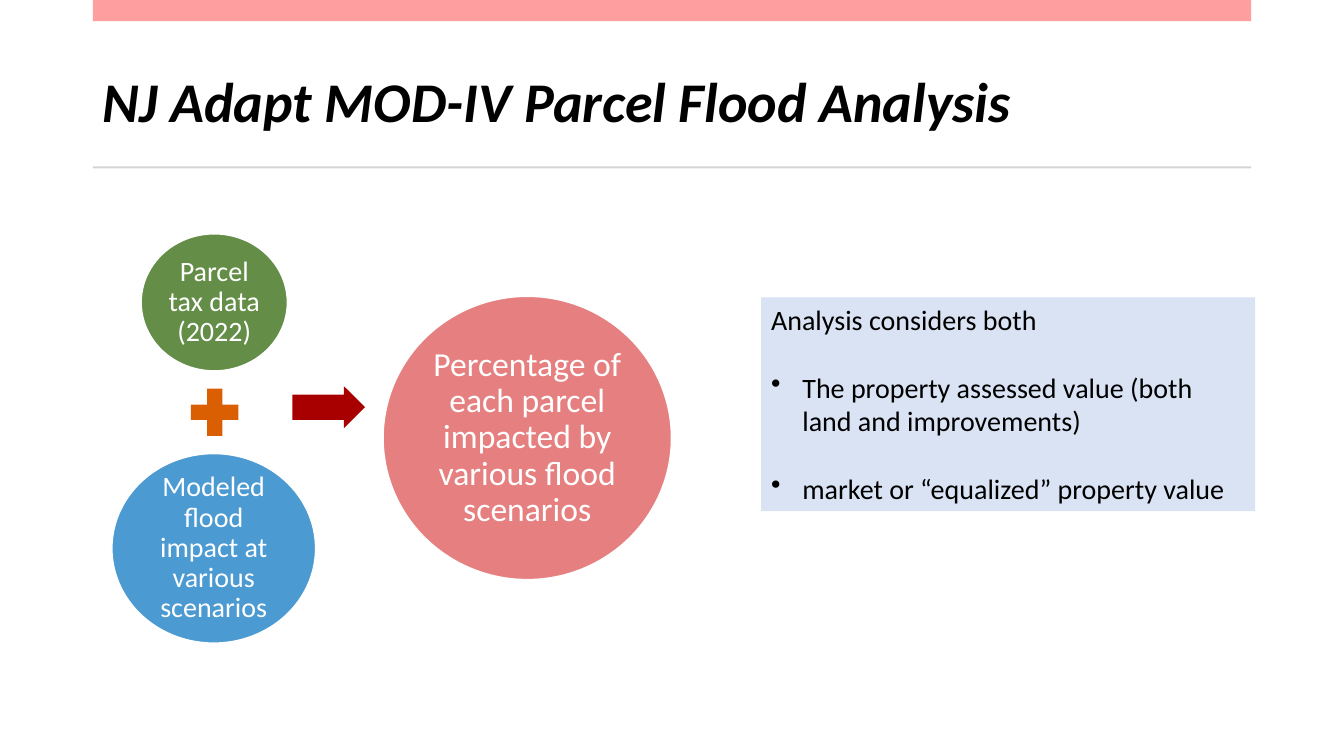
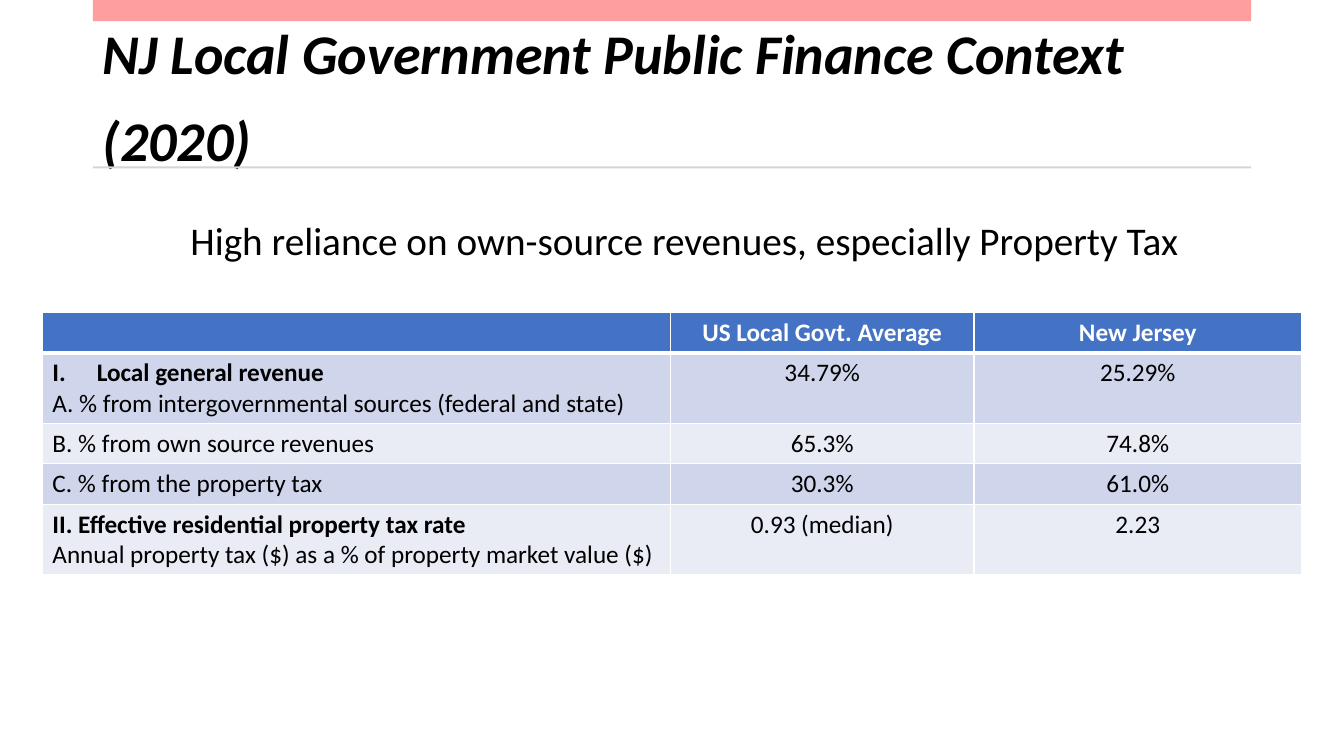
import pptx
import pptx.dml.color
import pptx.enum.shapes
import pptx.enum.text
import pptx.oxml.ns
import pptx.util
from lxml import etree

Inches = pptx.util.Inches
Pt = pptx.util.Pt
Shape = pptx.enum.shapes.MSO_SHAPE
Align = pptx.enum.text.PP_ALIGN
Anchor = pptx.enum.text.MSO_ANCHOR
qn = pptx.oxml.ns.qn


class Theme:
    FONT = "Calibri"
    BLACK, WHITE = "000000", "FFFFFF"
    BAND, RULE = "FF9E9E", "D5D5D5"
    GREEN, BLUE, RED = "548235", "0070C0", "CE0000"
    PLUS, ARROW, PANEL = "D95F02", "A80000", "DAE3F3"
    HEADER, ROWS = "4472C4", ("CFD5EA", "E9EBF5")
    TITLE, LEAD, LARGE, BODY, TABLE = 40, 28, 24, 20, 18


def rgb(code):
    return pptx.dml.color.RGBColor.from_string(code)


def add_child(parent, tag, **attributes):
    return etree.SubElement(parent, qn(tag), attributes)


def set_marker(para, indent, tag, **attributes):
    """Give a paragraph a hanging indent with a bullet or number."""
    properties = para._p.get_or_add_pPr()
    properties.set("marL", str(Inches(indent)))
    properties.set("indent", str(-Inches(indent)))
    add_child(properties, tag, **attributes)


def set_borders(cell, top, bottom):
    """Draw white cell borders, with top and bottom widths in points."""
    properties = cell._tc.get_or_add_tcPr()
    sides = {"a:lnL": 1, "a:lnR": 1, "a:lnT": top, "a:lnB": bottom}
    for position, (tag, width) in enumerate(sides.items()):
        line = etree.Element(qn(tag), {"w": str(Pt(width))})
        add_child(add_child(line, "a:solidFill"), "a:srgbClr", val=Theme.WHITE)
        properties.insert(position, line)


class Deck:
    def __init__(self):
        self.deck = pptx.Presentation()
        self.deck.slide_width = Inches(13.33)
        self.deck.slide_height = Inches(7.5)
        self.page = None

    def style(self, para, size, color=Theme.BLACK, bold=False, italic=False):
        font = para.font
        font.name, font.size = Theme.FONT, Pt(size)
        font.bold, font.italic = bold, italic
        font.color.rgb = rgb(color)

    def add_page(self, title, title_top, spacing):
        self.page = self.deck.slides.add_slide(self.deck.slide_layouts[6])
        box = self.text(title, 0.92, title_top, 11.49, 1.18, Theme.TITLE, bold=True, italic=True)
        box.text_frame.vertical_anchor = Anchor.MIDDLE
        box.text_frame.paragraphs[0].line_spacing = spacing
        self.shape(Shape.RECTANGLE, 0.92, 0, 11.49, 0.21, Theme.BAND)
        self.shape(Shape.RECTANGLE, 0.92, 1.65, 11.49, 0.02, Theme.RULE)

    def text(self, words, left, top, width, height, size, **look):
        box = self.page.shapes.add_textbox(Inches(left), Inches(top), Inches(width), Inches(height))
        box.text_frame.word_wrap = True
        para = box.text_frame.paragraphs[0]
        para.text = words
        self.style(para, size, **look)
        return box

    def shape(self, kind, left, top, width, height, fill):
        shape = self.page.shapes.add_shape(kind, Inches(left), Inches(top), Inches(width), Inches(height))
        shape.shadow.inherit = False
        shape.fill.solid()
        shape.fill.fore_color.rgb = rgb(fill)
        shape.line.fill.background()
        return shape

    def circle(self, words, left, top, width, height, fill, opacity, size):
        circle = self.shape(Shape.OVAL, left, top, width, height, fill)
        color = circle._element.spPr.find(qn("a:solidFill")).find(qn("a:srgbClr"))
        add_child(color, "a:alpha", val=str(opacity * 1000))
        circle.line.color.rgb = rgb(Theme.WHITE)
        circle.line.width = Pt(1)
        frame = circle.text_frame
        frame.word_wrap = True
        frame.vertical_anchor = Anchor.MIDDLE
        frame.margin_left = frame.margin_right = Inches(0.03)
        frame.margin_top = frame.margin_bottom = Inches(0.03)
        para = frame.paragraphs[0]
        para.text = words
        para.alignment = Align.CENTER
        para.line_spacing = 0.9
        self.style(para, size, Theme.WHITE)

    def panel(self, heading, bullets, left, top, width, height):
        box = self.text(heading, left, top, width, height, Theme.BODY)
        box.fill.solid()
        box.fill.fore_color.rgb = rgb(Theme.PANEL)
        for bullet in bullets:
            para = box.text_frame.add_paragraph()
            para.text = bullet
            para.space_before = Pt(24.4)
            set_marker(para, 0.31, "a:buChar", char="•")
            self.style(para, Theme.BODY)

    def table(self, rows, left, top, widths, heights):
        """Each cell is a list of (words, bold, numbered) lines."""
        table = self.page.shapes.add_table(
            len(rows), len(widths), Inches(left), Inches(top),
            Inches(sum(widths)), Inches(sum(heights))).table
        for column, width in zip(table.columns, widths):
            column.width = Inches(width)
        for row, height in zip(table.rows, heights):
            row.height = Inches(height)
        for r, row in enumerate(rows):
            for c, lines in enumerate(row):
                cell = table.cell(r, c)
                cell.fill.solid()
                cell.fill.fore_color.rgb = rgb(Theme.ROWS[(r - 1) % 2] if r else Theme.HEADER)
                set_borders(cell, 3 if r == 1 else 1, 1 if r else 3)
                for n, (words, bold, numbered) in enumerate(lines):
                    frame = cell.text_frame
                    para = frame.add_paragraph() if n else frame.paragraphs[0]
                    para.text = words
                    para.alignment = Align.CENTER if c else Align.LEFT
                    if numbered:
                        set_marker(para, 0.44, "a:buAutoNum", type="romanUcPeriod")
                    self.style(para, Theme.TABLE, Theme.BLACK if r else Theme.WHITE, bold)


def plain(words):
    return [(words, False, False)]


def strong(words):
    return [(words, True, False)]


def build_flood_page(deck):
    deck.add_page("NJ Adapt MOD-IV Parcel Flood Analysis", 0.37, 1.1)
    deck.circle("Parcel tax data (2022)", 1.4, 2.32, 1.45, 1.36, Theme.GREEN, 90, Theme.BODY)
    deck.shape(Shape.MATH_PLUS, 1.81, 3.77, 0.64, 0.64, Theme.PLUS)
    deck.circle("Modeled flood impact at various scenarios", 1.11, 4.5, 2.02, 1.88,
                Theme.BLUE, 70, Theme.BODY)
    arrow = deck.shape(Shape.RIGHT_ARROW, 2.9, 3.83, 0.72, 0.42, Theme.ARROW)
    arrow.adjustments[0] = 0.6
    deck.circle("Percentage of each parcel impacted by various flood scenarios",
                3.8, 2.94, 2.86, 2.81, Theme.RED, 50, Theme.LARGE)
    deck.panel("Analysis considers both",
               ["The property assessed value (both land and improvements)",
                "market or “equalized” property value"],
               7.55, 2.95, 4.9, 2.12)


def build_finance_page(deck):
    deck.add_page("NJ Local Government Public Finance Context (2020)", 0.26, 1.3)
    deck.text("High reliance on own-source revenues, especially Property Tax",
              1.79, 2.1, 10.42, 0.57, Theme.LEAD)
    revenue = [("Local general revenue", True, True)]
    revenue += plain("A. % from intergovernmental sources (federal and state)")
    tax_rate = strong("II. Effective residential property tax rate")
    tax_rate += plain("Annual property tax ($) as a % of property market value ($)")
    rows = [
        [[], strong("US Local Govt. Average"), strong("New Jersey")],
        [revenue, plain("34.79%"), plain("25.29%")],
        [plain("B. % from own source revenues"), plain("65.3%"), plain("74.8%")],
        [plain("C. % from the property tax"), plain("30.3%"), plain("61.0%")],
        [tax_rate, plain("0.93 (median)"), plain("2.23")],
    ]
    deck.table(rows, 0.42, 3.1, [6.23, 3.01, 3.25], [0.4, 0.7, 0.4, 0.4, 0.7])


def main():
    deck = Deck()
    build_flood_page(deck)
    build_finance_page(deck)
    deck.deck.save("out.pptx")


if __name__ == "__main__":
    main()
